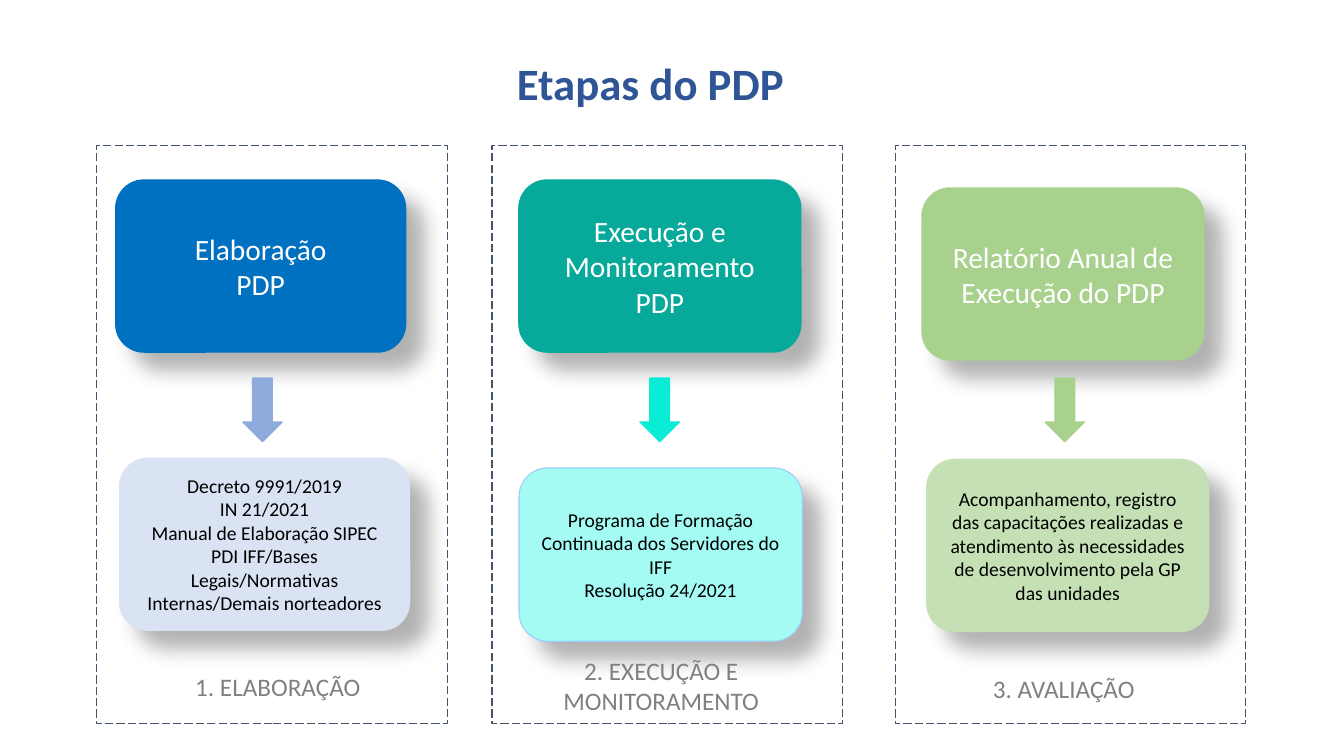
from lxml import etree
from pptx import Presentation
from pptx import util as u
from pptx.dml.color import RGBColor
from pptx.enum import dml, shapes, text
from pptx.oxml.ns import qn

COLORS = {
    "title": "2F5597", "frame": "44546A", "label": "808080",
    "white": "FFFFFF", "black": "000000", "outline": "99CCFF",
    "blue": "0070C0", "blue_arrow": "8FAADC", "blue_pale": "DAE3F3",
    "teal": "07A99A", "teal_arrow": "0AECD6", "teal_pale": "A3FBF3",
    "green": "A9D18E", "green_pale": "C5E0B4",
}
FONT = "Calibri"
CENTER, LEFT = text.PP_ALIGN.CENTER, text.PP_ALIGN.LEFT
CARD_HEIGHT = 4.37

STAGES = [
    {
        "frame": 2.44, "width": 7.34,
        "head": (2.9, 4.52, "blue", ["Elaboração", "PDP"]),
        "arrow": (6.12, "blue_arrow"),
        "detail": (3.0, 11.53, "blue_pale", [
            "Decreto 9991/2019", "IN 21/2021", "Manual de Elaboração SIPEC",
            "PDI IFF/Bases Legais/Normativas Internas/Demais norteadores"]),
        "outline": None,
        "label": (4.67, 16.66, 4.9, "1. ELABORAÇÃO", LEFT),
    },
    {
        "frame": 12.4, "width": 7.14,
        "head": (13.06, 4.52, "teal", ["Execução e Monitoramento", "PDP"]),
        "arrow": (16.13, "teal_arrow"),
        "detail": (13.08, 11.79, "teal_pale", [
            "Programa de Formação Continuada dos Servidores do IFF",
            "Resolução 24/2021"]),
        "outline": "outline",
        "label": (13.67, 16.26, 5.99, "2. EXECUÇÃO E MONITORAMENTO", CENTER),
    },
    {
        "frame": 22.56, "width": 7.14,
        "head": (23.22, 4.72, "green", ["Relatório Anual de Execução do PDP"]),
        "arrow": (26.34, "green"),
        "detail": (23.34, 11.56, "green_pale", [
            "Acompanhamento, registro das capacitações realizadas e "
            "atendimento às necessidades de desenvolvimento pela GP das unidades"]),
        "outline": None,
        "label": (24.77, 16.71, 4.9, "3. AVALIAÇÃO", LEFT),
    },
]


def rgb(name):
    return RGBColor.from_string(COLORS[name])


def cm(*lengths):
    return [u.Cm(length) for length in lengths]


def write(tf, lines, size, color, align=CENTER, bold=False):
    tf.word_wrap = True
    for i, line in enumerate(lines):
        p = tf.add_paragraph() if i else tf.paragraphs[0]
        p.alignment = align
        r = p.add_run()
        r.text = line
        r.font.name = FONT
        r.font.size = u.Pt(size)
        r.font.bold = bold
        r.font.color.rgb = rgb(color)


def add_title(s, title):
    sp = s.shapes.title
    sp.left, sp.top, sp.width, sp.height = cm(1.19, -3.73, 30.66, 6.63)
    tf = sp.text_frame
    tf.vertical_anchor = text.MSO_ANCHOR.BOTTOM
    write(tf, [title], 32, "title", bold=True)
    tf.paragraphs[0].line_spacing = 0.9


def add_block(s, kind, box, fill=None, line=None, weight=0.75):
    sp = s.shapes.add_shape(kind, *cm(*box))
    sp.shadow.inherit = False
    if fill:
        sp.fill.solid()
        sp.fill.fore_color.rgb = rgb(fill)
    else:
        sp.fill.background()
    if line:
        sp.line.color.rgb = rgb(line)
        sp.line.width = u.Pt(weight)
    else:
        sp.line.fill.background()
    return sp


def add_shadow(sp):
    effects = sp._element.spPr.find(qn("a:effectLst"))
    shadow = etree.SubElement(
        effects, qn("a:outerShdw"), blurRad=str(u.Pt(15)), dist=str(u.Pt(18)),
        dir="2700000", algn="tl", rotWithShape="0")
    color = etree.SubElement(shadow, qn("a:srgbClr"), val=COLORS["black"])
    etree.SubElement(color, qn("a:alpha"), val="30000")


def add_card(s, card, width, size, color, line=None):
    left, top, fill, lines = card
    sp = add_block(s, shapes.MSO_SHAPE.ROUNDED_RECTANGLE,
                   (left, top, width, CARD_HEIGHT), fill, line)
    add_shadow(sp)
    tf = sp.text_frame
    tf.vertical_anchor = text.MSO_ANCHOR.MIDDLE
    write(tf, lines, size, color)


def add_frame(s, left):
    sp = add_block(s, shapes.MSO_SHAPE.RECTANGLE,
                   (left, 3.66, 8.84, 14.58), line="frame")
    sp.line.dash_style = dml.MSO_LINE.LONG_DASH


def add_arrow(s, left, color):
    add_block(s, shapes.MSO_SHAPE.DOWN_ARROW,
              (left, 9.53, 0.99, 1.6), color, color, 1)


def add_label(s, left, top, width, caption, align):
    tf = s.shapes.add_textbox(*cm(left, top, width, 0.69)).text_frame
    tf.margin_left = tf.margin_right = u.Cm(0.25)
    tf.margin_top = tf.margin_bottom = u.Cm(0.25)
    write(tf, [caption], 18, "label", align)


def add_stage(s, stage):
    add_frame(s, stage["frame"])
    add_card(s, stage["head"], stage["width"], 21, "white")
    add_arrow(s, *stage["arrow"])
    add_card(s, stage["detail"], stage["width"], 14, "black", stage["outline"])
    add_label(s, *stage["label"])


def main():
    prs = Presentation()
    prs.slide_width, prs.slide_height = cm(33.87, 19.05)
    s = prs.slides.add_slide(prs.slide_layouts[5])
    add_title(s, "Etapas do PDP ")
    for stage in STAGES:
        add_stage(s, stage)
    prs.save("out.pptx")


if __name__ == "__main__":
    main()
